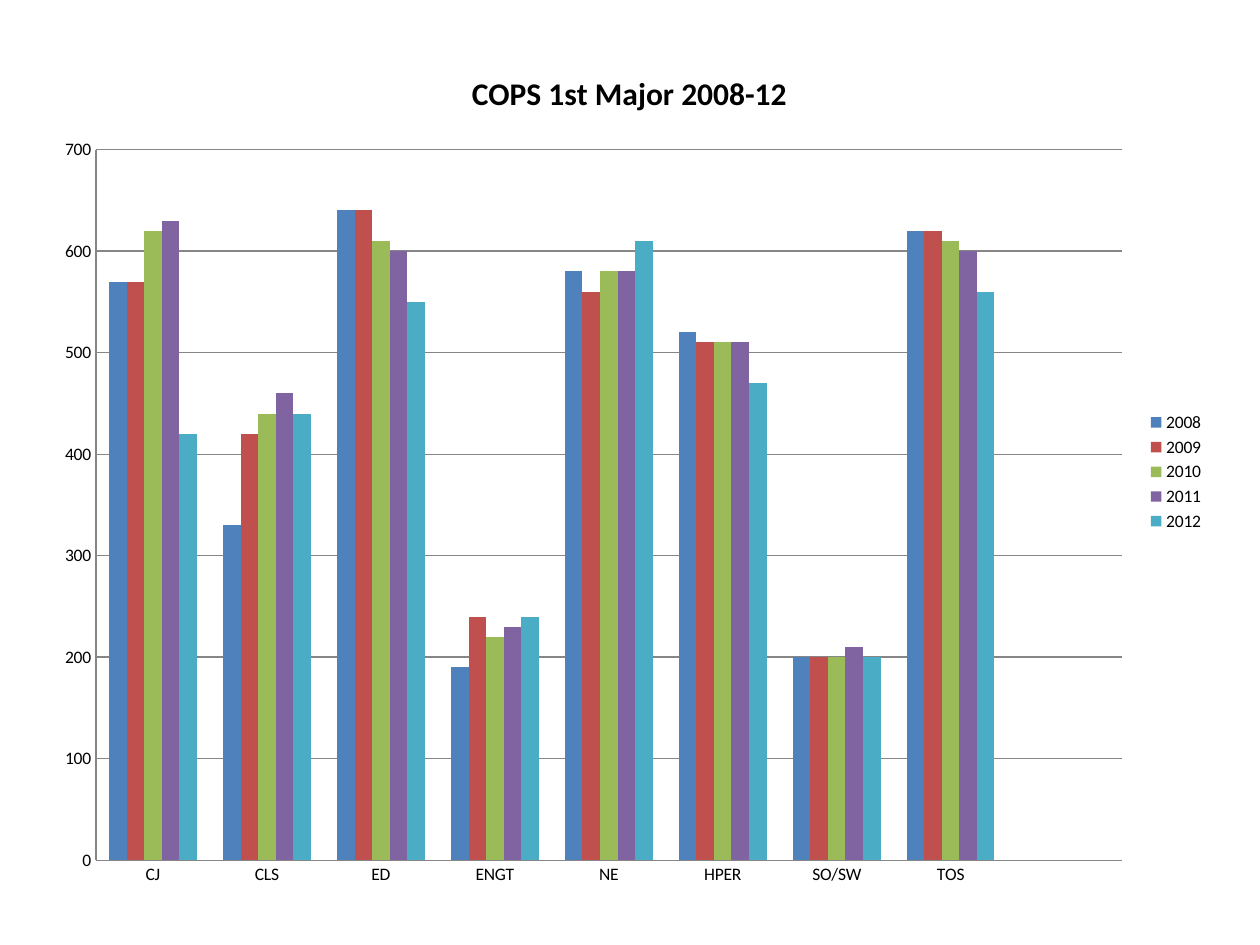
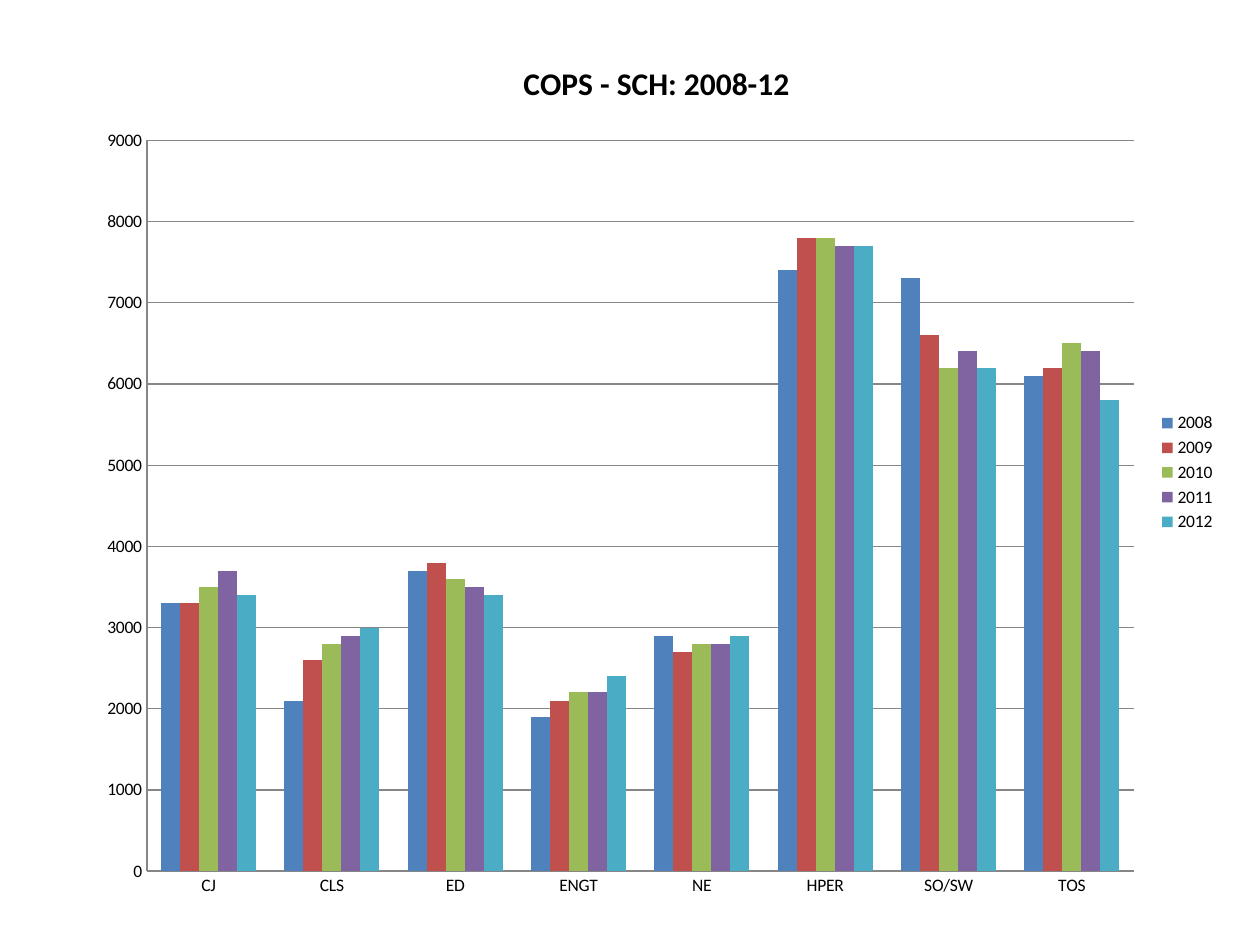
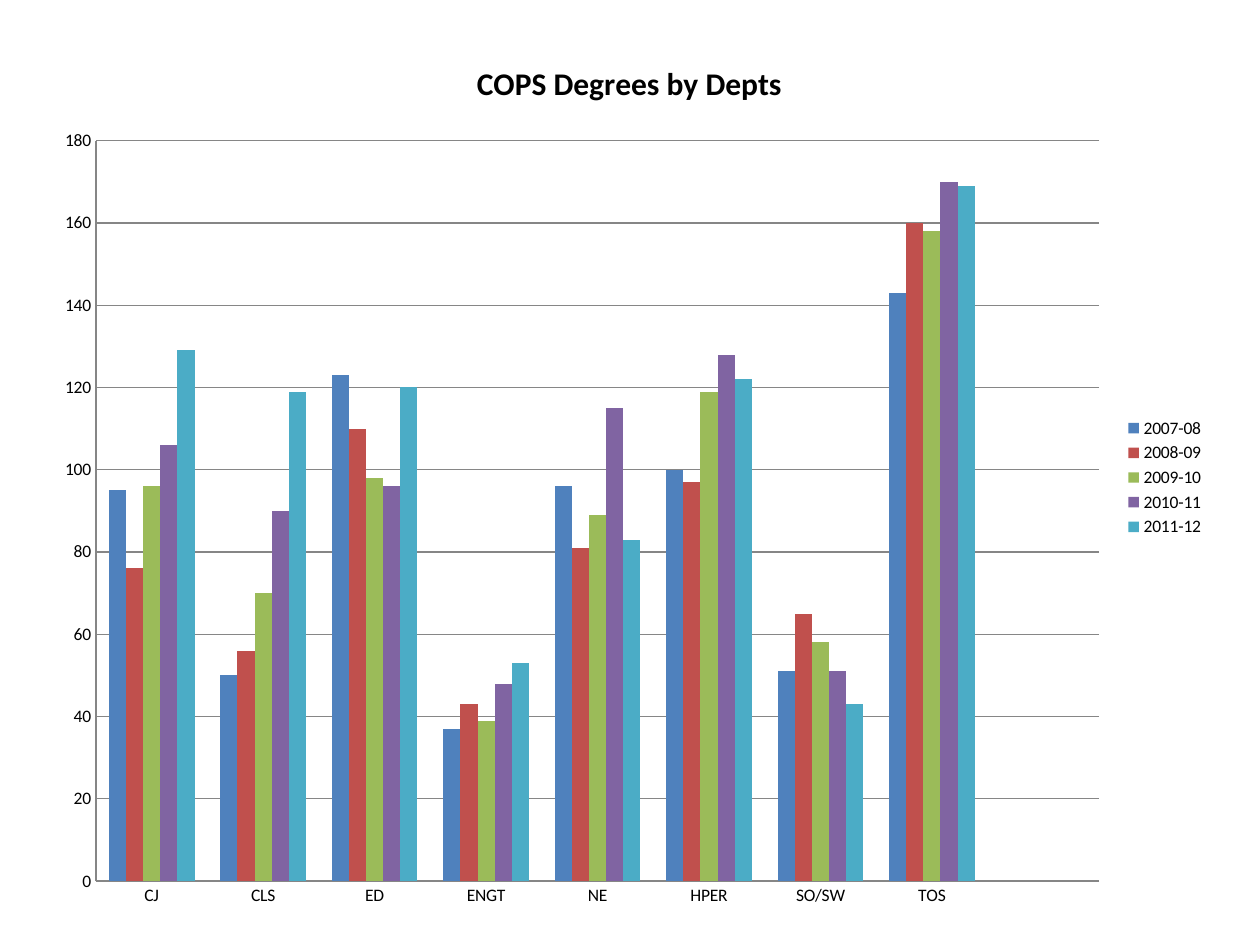
from dataclasses import dataclass
from typing import Optional

from pptx import Presentation
from pptx import util as u
from pptx.chart.data import CategoryChartData
from pptx.dml.color import RGBColor
from pptx.enum import chart as ch

FONT = "Calibri"
COLORS = {
    "text": "000000",
    "axis": "868686",
    "year1": "4F81BD",
    "year2": "C0504D",
    "year3": "9BBB59",
    "year4": "8064A2",
    "year5": "4BACC6",
}
YEAR_COLORS = [f"year{i}" for i in range(1, 6)]
DEPTS = ["CJ", "CLS", "ED", "ENGT", "NE", "HPER", "SO/SW", "TOS"]
YEARS = ["2008", "2009", "2010", "2011", "2012"]
SCHOOL_YEARS = ["2007-08", "2008-09", "2009-10", "2010-11", "2011-12"]


@dataclass
class DeptChart:
    title: str
    box: tuple[float, float, float, float]
    years: list[str]
    rows: list[list[int]]  # one row per year, one value per department
    top: int
    step: int
    spare_slot: bool = False  # leaves an empty category at the right


CHARTS = [
    DeptChart("COPS 1st Major 2008-12", (0.33, 0.33, 9.33, 6.83), YEARS, [
        [570, 330, 640, 190, 580, 520, 200, 620],
        [570, 420, 640, 240, 560, 510, 200, 620],
        [620, 440, 610, 220, 580, 510, 200, 610],
        [630, 460, 600, 230, 580, 510, 210, 600],
        [420, 440, 550, 240, 610, 470, 200, 560],
    ], 700, 100, True),
    DeptChart("COPS - SCH: 2008-12", (0.67, 0.25, 9.08, 7), YEARS, [
        [3300, 2100, 3700, 1900, 2900, 7400, 7300, 6100],
        [3300, 2600, 3800, 2100, 2700, 7800, 6600, 6200],
        [3500, 2800, 3600, 2200, 2800, 7800, 6200, 6500],
        [3700, 2900, 3500, 2200, 2800, 7700, 6400, 6400],
        [3400, 3000, 3400, 2400, 2900, 7700, 6200, 5800],
    ], 9000, 1000),
    DeptChart("COPS Degrees by Depts", (0.33, 0.25, 9.33, 7.08), SCHOOL_YEARS, [
        [95, 50, 123, 37, 96, 100, 51, 143],
        [76, 56, 110, 43, 81, 97, 65, 160],
        [96, 70, 98, 39, 89, 119, 58, 158],
        [106, 90, 96, 48, 115, 128, 51, 170],
        [129, 119, 120, 53, 83, 122, 43, 169],
    ], 180, 20, True),
]


def rgb(name: str) -> RGBColor:
    return RGBColor.from_string(COLORS[name])


def style_font(font, size: int, bold: Optional[bool] = None) -> None:
    font.name = FONT
    font.size = u.Pt(size)
    font.bold = bold
    font.color.rgb = rgb("text")


def style_line(line) -> None:
    line.color.rgb = rgb("axis")
    line.width = u.Pt(0.75)


def chart_data(spec_: DeptChart) -> CategoryChartData:
    data = CategoryChartData(number_format="General")
    data.categories = DEPTS + [""] * spec_.spare_slot
    for year, row in zip(spec_.years, spec_.rows):
        data.add_series(year, row + [None] * spec_.spare_slot)
    return data


def add_dept_chart(slide, dept_chart: DeptChart) -> None:
    box = [u.Inches(v) for v in dept_chart.box]
    chart = slide.shapes.add_chart(
        ch.XL_CHART_TYPE.COLUMN_CLUSTERED, *box, chart_data(dept_chart)).chart
    style_font(chart.font, 10)

    # Title and legend
    chart.has_title = True
    tf = chart.chart_title.text_frame
    tf.text = dept_chart.title
    style_font(tf.paragraphs[0].runs[0].font, 18, True)
    chart.chart_title.include_in_layout = False
    chart.has_legend = True
    chart.legend.position = ch.XL_LEGEND_POSITION.RIGHT
    chart.legend.include_in_layout = False

    # Axes
    for axis in (chart.category_axis, chart.value_axis):
        axis.major_tick_mark = ch.XL_TICK_MARK.NONE
        axis.minor_tick_mark = ch.XL_TICK_MARK.NONE
        style_line(axis.format.line)
    values = chart.value_axis
    values.minimum_scale = 0
    values.maximum_scale = dept_chart.top
    values.major_unit = dept_chart.step
    values.has_major_gridlines = True
    style_line(values.major_gridlines.format.line)

    # Columns
    plot = chart.plots[0]
    plot.gap_width = 150
    plot.overlap = 0
    plot.vary_by_categories = False
    for series, color in zip(plot.series, YEAR_COLORS):
        series.format.fill.solid()
        series.format.fill.fore_color.rgb = rgb(color)
        series.invert_if_negative = False


def main() -> None:
    prs = Presentation()
    prs.slide_width = u.Inches(10)
    prs.slide_height = u.Inches(7.5)
    for dept_chart in CHARTS:
        slide = prs.slides.add_slide(prs.slide_layouts[6])
        add_dept_chart(slide, dept_chart)
    prs.save("out.pptx")


if __name__ == "__main__":
    main()
